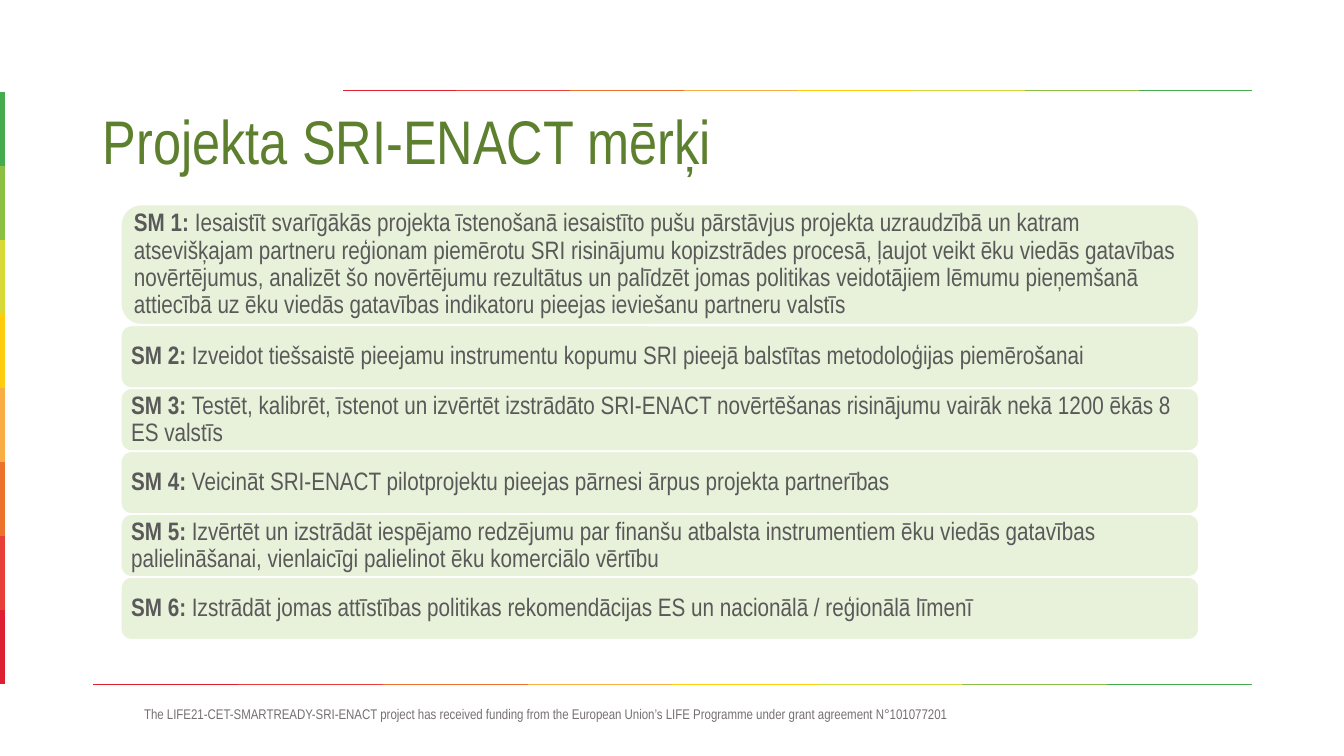
"""Build the slide listing the six goals of the SRI-ENACT project."""
from dataclasses import dataclass

from lxml import etree
from pptx import Presentation
from pptx import util as u
from pptx.dml.color import RGBColor
from pptx.enum import shapes, text
from pptx.oxml.ns import qn


@dataclass(frozen=True)
class Theme:
    font: str = "Arial Narrow"
    title: str = "5D802E"
    body: str = "595959"
    footer: str = "767171"
    card: str = "E8F2DA"
    card_line: str = "FFFFFF"
    spectrum: tuple = ("45AB4F", "8CC044", "D6D936", "FFCC0E",
                       "F8AD45", "ED732D", "E84038", "DE1F31")
    title_size: int = 44
    body_size: int = 18
    footer_size: int = 10


theme = Theme()


def style(span, size, color, bold=False):
    span.font.name = theme.font
    span.font.size = u.Pt(size)
    span.font.bold = bold
    span.font.color.rgb = RGBColor.from_string(color)


def set_frame(frame, left, top, right, bottom):
    frame.word_wrap = True
    frame.auto_size = text.MSO_AUTO_SIZE.NONE
    frame.vertical_anchor = text.MSO_ANCHOR.MIDDLE
    frame.margin_left, frame.margin_top = u.Inches(left), u.Inches(top)
    frame.margin_right, frame.margin_bottom = u.Inches(right), u.Inches(bottom)


deck = Presentation()
deck.slide_width, deck.slide_height = u.Inches(13.33), u.Inches(7.5)
page = deck.slides.add_slide(deck.slide_layouts[5])

spectrum_lines = [
    ((12.42, 6.79), (0.92, 6.79), 0.75),
    ((12.42, 0.9), (3.4, 0.9), 0.75),
    ((0.02, 0.91), (0.02, 6.79), 4.5),
]
for (x1, y1), (x2, y2), width in spectrum_lines:
    count = len(theme.spectrum)
    dx, dy = (x2 - x1) / count, (y2 - y1) / count
    for i, color in enumerate(theme.spectrum):
        segment = page.shapes.add_connector(
            shapes.MSO_CONNECTOR.STRAIGHT,
            u.Inches(x1 + dx * i), u.Inches(y1 + dy * i),
            u.Inches(x1 + dx * (i + 1)), u.Inches(y1 + dy * (i + 1)))
        segment.line.color.rgb = RGBColor.from_string(color)
        segment.line.width = u.Pt(width)
        etree.SubElement(segment._element.spPr, qn("a:effectLst"))

title = page.shapes.title
title.left, title.top = u.Inches(0.92), u.Inches(1.03)
title.width, title.height = u.Inches(11.5), u.Inches(0.81)
title.text_frame.text = "Projekta SRI-ENACT mērķi"
set_frame(title.text_frame, 0.1, 0.05, 0.1, 0.05)
para = title.text_frame.paragraphs[0]
para.alignment = text.PP_ALIGN.LEFT
para.line_spacing = 0.9
style(para.runs[0], theme.title_size, theme.title)

footer = page.shapes.add_textbox(u.Inches(1.33), u.Inches(6.95), u.Inches(10.51), u.Inches(0.27))
footer.text_frame.text = (
    "The LIFE21-CET-SMARTREADY-SRI-ENACT project has received funding from "
    "the European Union’s LIFE Programme under grant agreement N°101077201")
set_frame(footer.text_frame, 0.1, 0.05, 0, 0.05)
style(footer.text_frame.paragraphs[0].runs[0], theme.footer_size, theme.footer)

goals = [
    "Iesaistīt svarīgākās projekta īstenošanā iesaistīto pušu pārstāvjus projekta uzraudzībā "
    "un katram atsevišķajam partneru reģionam piemērotu SRI risinājumu kopizstrādes procesā, "
    "ļaujot veikt ēku viedās gatavības novērtējumus, analizēt šo novērtējumu rezultātus un "
    "palīdzēt jomas politikas veidotājiem lēmumu pieņemšanā attiecībā uz ēku viedās gatavības "
    "indikatoru pieejas ieviešanu partneru valstīs",
    "Izveidot tiešsaistē pieejamu instrumentu kopumu SRI pieejā balstītas metodoloģijas "
    "piemērošanai",
    "Testēt, kalibrēt, īstenot un izvērtēt izstrādāto SRI-ENACT novērtēšanas risinājumu "
    "vairāk nekā 1200 ēkās 8 ES valstīs",
    "Veicināt SRI-ENACT pilotprojektu pieejas pārnesi ārpus projekta partnerības",
    "Izvērtēt un izstrādāt iespējamo redzējumu par finanšu atbalsta instrumentiem ēku viedās "
    "gatavības palielināšanai, vienlaicīgi palielinot ēku komerciālo vērtību",
    "Izstrādāt jomas attīstības politikas rekomendācijas ES un nacionālā / reģionālā līmenī",
]
short_top, short_bottom = 3.23, 6.35
pitch = (short_bottom - short_top) / (len(goals) - 1)
for i, goal in enumerate(goals):
    top, height = (short_top + pitch * (i - 1), 0.62) if i else (2.03, 1.19)
    card = page.shapes.add_shape(
        shapes.MSO_SHAPE.ROUNDED_RECTANGLE,
        u.Inches(1.2), u.Inches(top), u.Inches(10.69), u.Inches(height))
    card.shadow.inherit = False
    card.fill.solid()
    card.fill.fore_color.rgb = RGBColor.from_string(theme.card)
    card.line.color.rgb = RGBColor.from_string(theme.card_line)
    card.line.width = u.Pt(1)
    set_frame(card.text_frame, 0.07, 0.07, 0.07, 0.07)
    para = card.text_frame.paragraphs[0]
    para.alignment = text.PP_ALIGN.LEFT
    para.line_spacing = 0.9
    for words, bold in ((f"SM {i + 1}: ", True), (goal, False)):
        span = para.add_run()
        span.text = words
        style(span, theme.body_size, theme.body, bold)

deck.save("out.pptx")
